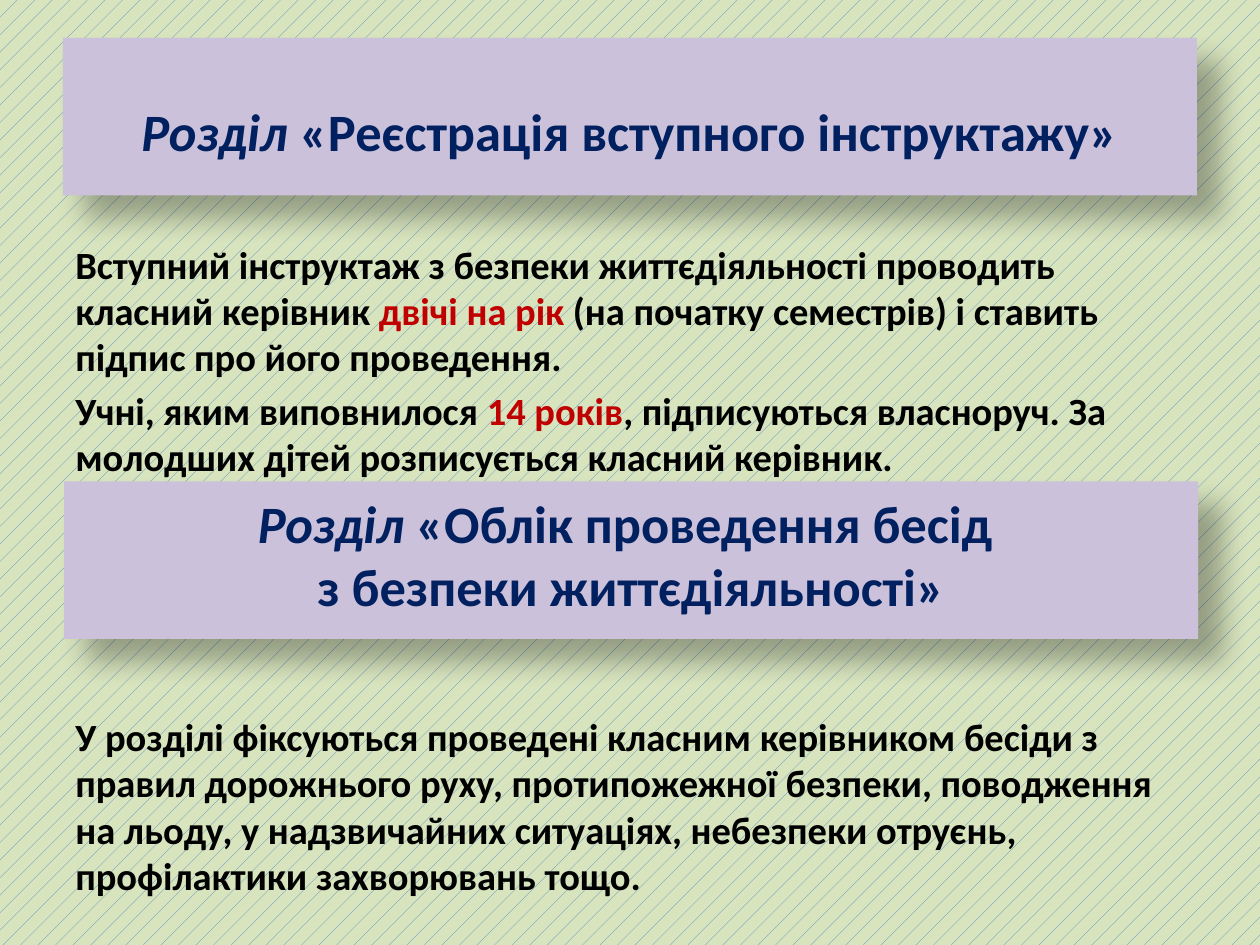
from dataclasses import dataclass

from lxml import etree
from pptx import Presentation
from pptx.dml.color import RGBColor
from pptx.enum.dml import MSO_PATTERN
from pptx.enum.shapes import MSO_SHAPE
from pptx.enum.text import MSO_ANCHOR, PP_ALIGN
from pptx.oxml.ns import qn
from pptx.util import Inches, Pt

RECTANGLE = MSO_SHAPE.RECTANGLE
DOTS = MSO_PATTERN.PERCENT_5
MIDDLE, TOP = MSO_ANCHOR.MIDDLE, MSO_ANCHOR.TOP
CENTER, LEFT = PP_ALIGN.CENTER, PP_ALIGN.LEFT


@dataclass(frozen=True)
class Theme:
    font: str = "Calibri"
    heading_size: float = 30
    body_size: float = 22
    body_gap: float = 4.4
    heading: RGBColor = RGBColor(0x00, 0x20, 0x60)
    body: RGBColor = RGBColor(0x00, 0x00, 0x00)
    accent: RGBColor = RGBColor(0xC0, 0x00, 0x00)
    banner: RGBColor = RGBColor(0xCC, 0xC1, 0xDA)
    backdrop: RGBColor = RGBColor(0xD7, 0xE4, 0xBD)
    pattern: RGBColor = RGBColor(0x4F, 0x81, 0xBD)


theme = Theme()


def write(shape, paragraphs, size, align, anchor, insets):
    frame = shape.text_frame
    frame.word_wrap = True
    frame.vertical_anchor = anchor
    frame.margin_top, frame.margin_bottom = map(Inches, insets)
    frame.text = "\n".join("".join(part[0] for part in parts) for parts in paragraphs)
    for paragraph, parts in zip(frame.paragraphs, paragraphs):
        paragraph.text = ""
        paragraph.alignment = align
        for wording, color, italic in parts:
            run = paragraph.add_run()
            run.text = wording
            run.font.name = theme.font
            run.font.size = Pt(size)
            run.font.bold = True
            run.font.italic = italic
            run.font.color.rgb = color
    return frame


def cast_shadow(shape):
    shape.shadow.inherit = False
    effects = shape._element.spPr.find(qn("a:effectLst"))
    shadow = etree.SubElement(
        effects, qn("a:outerShdw"), blurRad=str(Pt(15)), dist=str(Pt(18)),
        dir="2700000", algn="tl", rotWithShape="0")
    color = etree.SubElement(shadow, qn("a:srgbClr"), val="000000")
    etree.SubElement(color, qn("a:alpha"), val="30000")


prs = Presentation()
prs.slide_width, prs.slide_height = Inches(10), Inches(7.5)
slide = prs.slides.add_slide(prs.slide_layouts[6])

backdrop = slide.background.fill
backdrop.patterned()
backdrop.pattern = DOTS
backdrop.fore_color.rgb = theme.pattern
backdrop.back_color.rgb = theme.backdrop

explanations = [
    (1.86, (0.05, 0.05), [
        [("Вступний інструктаж з безпеки життєдіяльності проводить класний керівник ", theme.body, False),
         ("двічі на рік", theme.accent, False),
         (" (на початку семестрів) і ставить підпис про його проведення.", theme.body, False)],
        [("Учні, яким виповнилося ", theme.body, False),
         ("14 років", theme.accent, False),
         (", підписуються власноруч. За молодших дітей розписується класний керівник.", theme.body, False)],
    ]),
    (5.17, (0.49, 0.05), [
        [("У розділі фіксуються проведені класним керівником бесіди з правил дорожнього руху, "
          "протипожежної безпеки, поводження на льоду, у надзвичайних ситуаціях, небезпеки отруєнь, "
          "профілактики захворювань тощо.", theme.body, False)],
    ]),
]
for top, insets, paragraphs in explanations:
    explanation = slide.shapes.add_textbox(Inches(0.5), Inches(top), Inches(9), Inches(1.89))
    frame = write(explanation, paragraphs, theme.body_size, LEFT, TOP, insets)
    for paragraph in frame.paragraphs[1:]:
        paragraph.space_before = Pt(theme.body_gap)

section_word = ("Розділ ", theme.heading, True)
sections = [
    (0.5, 0.3, (0.27, 0.05), [
        [section_word, ("«Реєстрація вступного інструктажу»", theme.heading, False)],
    ]),
    (0.51, 3.82, (0.05, 0.14), [
        [section_word, ("«Облік проведення бесід ", theme.heading, False)],
        [("з безпеки життєдіяльності»", theme.heading, False)],
    ]),
]
for left, top, insets, paragraphs in sections:
    banner = slide.shapes.add_shape(RECTANGLE, Inches(left), Inches(top), Inches(9), Inches(1.25))
    banner.fill.solid()
    banner.fill.fore_color.rgb = theme.banner
    banner.line.fill.background()
    cast_shadow(banner)
    write(banner, paragraphs, theme.heading_size, CENTER, MIDDLE, insets)

prs.save("out.pptx")
